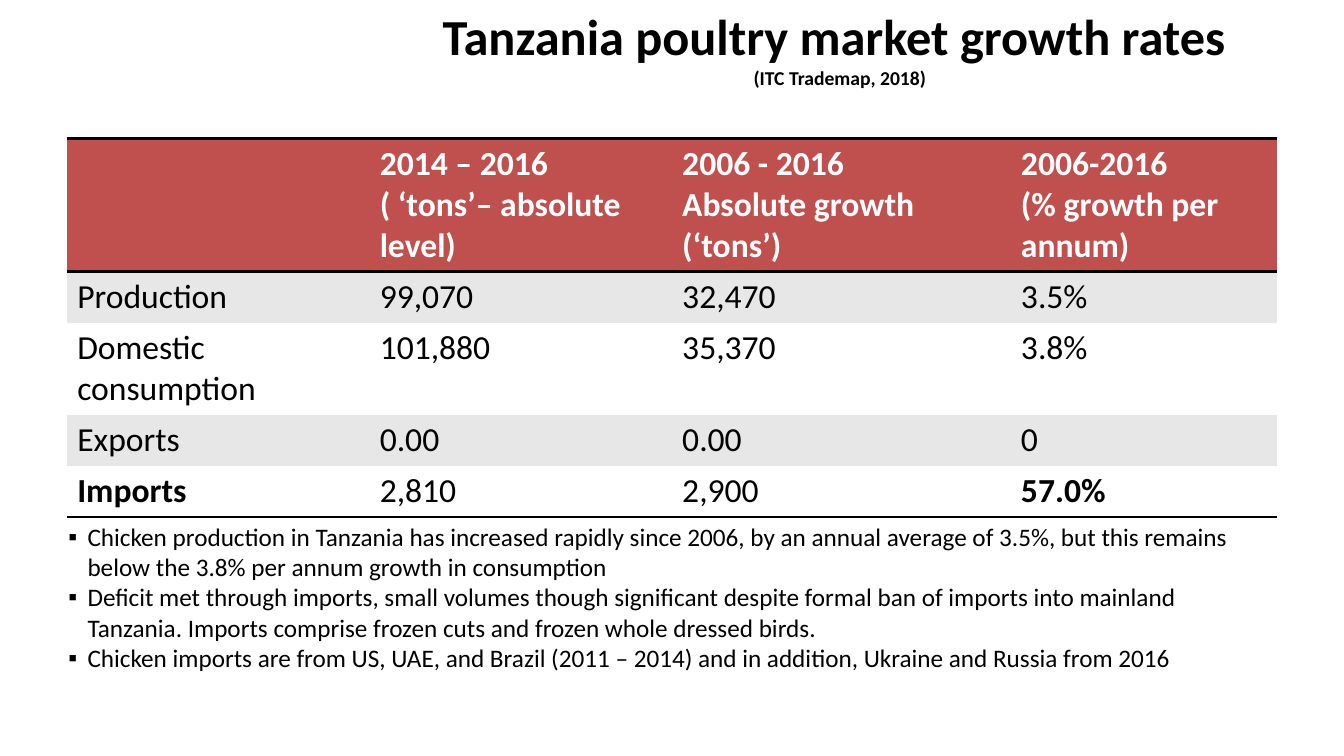
from lxml import etree
from pptx import Presentation
from pptx import util as u
from pptx.dml.color import RGBColor
from pptx.enum import text
from pptx.oxml import ns

TITLE = ("Tanzania poultry market growth rates ", "(ITC Trademap, 2018)")
ROWS = [
    ("", "2014 – 2016\n( ‘tons’– absolute level)",
     "2006 - 2016\nAbsolute growth\n(‘tons’)", "2006-2016\n(% growth per annum)"),
    ("Production", "99,070", "32,470", "3.5%"),
    ("Domestic consumption", "101,880", "35,370", "3.8%"),
    ("Exports", "0.00", "0.00", "0"),
    ("Imports", "2,810", "2,900", "57.0%"),
]
STRONG = {"Imports", "57.0%"}
NOTES = [
    "Chicken production in Tanzania has increased rapidly since 2006, by an annual average of 3.5%, "
    "but this remains below the 3.8% per annum growth in consumption",
    "Deficit met through imports, small volumes though significant despite formal ban of imports "
    "into mainland Tanzania. Imports comprise frozen cuts and frozen whole dressed birds.",
    "Chicken imports are from US, UAE, and Brazil (2011 – 2014) and in addition, "
    "Ukraine and Russia from 2016",
]


class Theme:
    face = "Calibri"
    ink, paper, head, band = "000000", "FFFFFF", "C0504D", "E7E7E7"
    title, source, cell, note = 36, 14, 24, 18
    rule = 2
    plain = "{2D5ABB26-0587-4C30-8999-92F81FD0307C}"


WIDE, HIGH = 13.33, 7.5
COLS = (3, 3, 3.36, 2.64)
LINES = (3, 1, 2, 1, 1)
STEP, PAD = 0.4, 0.1
HANG = 0.19
BOX = {
    "title": (0.288, 0, 0.674, 0.167),
    "table": (0.05, 0.183, 0.9, 0.493),
    "notes": (0.0435, 0.683, 0.892, 0.216),
}


def place(key):
    return [u.Inches(part * side) for part, side in zip(BOX[key], (WIDE, HIGH) * 2)]


def style(font, size, color=Theme.ink, bold=False):
    for key, val in {"name": Theme.face, "size": u.Pt(size), "bold": bold}.items():
        setattr(font, key, val)
    font.color.rgb = RGBColor.from_string(color)


def rule(cell, side):
    line = etree.Element(ns.qn("a:ln" + side), w=str(u.Pt(Theme.rule)))
    fill = etree.SubElement(line, ns.qn("a:solidFill"))
    etree.SubElement(fill, ns.qn("a:srgbClr"), val=Theme.ink)
    cell._tc.get_or_add_tcPr().insert(0, line)


def add_title(slide):
    shape = slide.shapes.title
    for key, val in zip(("left", "top", "width", "height"), place("title")):
        setattr(shape, key, val)
    frame = shape.text_frame
    for key, val in {"word_wrap": True, "auto_size": text.MSO_AUTO_SIZE.NONE,
                     "vertical_anchor": text.MSO_ANCHOR.TOP}.items():
        setattr(frame, key, val)
    para = frame.paragraphs[0]
    para.alignment = text.PP_ALIGN.CENTER
    for i, (line, size) in enumerate(zip(TITLE, (Theme.title, Theme.source))):
        if i:
            para.add_line_break()
        run = para.add_run()
        run.text = line
        style(run.font, size, bold=True)


def add_table(slide):
    table = slide.shapes.add_table(len(ROWS), len(COLS), *place("table")).table
    table._tbl.tblPr.find(ns.qn("a:tableStyleId")).text = Theme.plain
    for col, width in zip(table.columns, COLS):
        col.width = u.Inches(width)
    for r, (row, lines) in enumerate(zip(ROWS, LINES)):
        table.rows[r].height = u.Inches(lines * STEP + PAD)
        top = r == 0
        fill = Theme.head if top else Theme.band if r % 2 else Theme.paper
        sides = "BT" if top else "B" if r == len(ROWS) - 1 else ""
        for c, words in enumerate(row):
            cell = table.cell(r, c)
            cell.text = words
            cell.fill.solid()
            cell.fill.fore_color.rgb = RGBColor.from_string(fill)
            for side in sides:
                rule(cell, side)
            for para in cell.text_frame.paragraphs:
                style(para.font, Theme.cell, Theme.paper if top else Theme.ink,
                      top or words in STRONG)


def add_notes(slide):
    frame = slide.shapes.add_textbox(*place("notes")).text_frame
    frame.word_wrap = True
    frame.auto_size = text.MSO_AUTO_SIZE.SHAPE_TO_FIT_TEXT
    frame.text = "\n".join(NOTES)
    for para in frame.paragraphs:
        props = para._p.get_or_add_pPr()
        props.set("marL", str(u.Inches(HANG)))
        props.set("indent", str(-u.Inches(HANG)))
        etree.SubElement(props, ns.qn("a:buFont"), typeface="Arial")
        etree.SubElement(props, ns.qn("a:buChar"), char="▪")
        style(para.font, Theme.note)


def main():
    deck = Presentation()
    deck.slide_width, deck.slide_height = u.Inches(WIDE), u.Inches(HIGH)
    slide = deck.slides.add_slide(deck.slide_layouts[5])
    for part in (add_title, add_table, add_notes):
        part(slide)
    deck.save("out.pptx")


if __name__ == "__main__":
    main()
